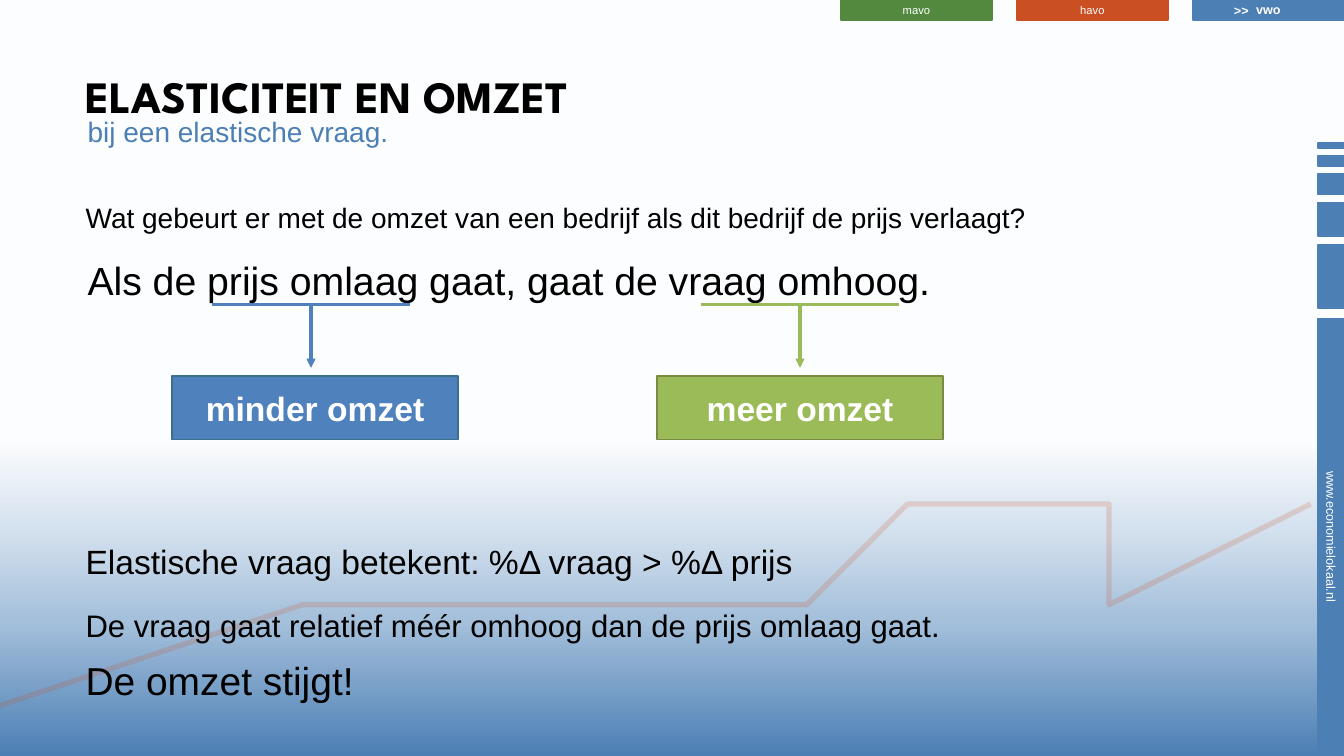
from lxml.etree import SubElement
from pptx import Presentation
from pptx.dml.color import RGBColor
from pptx.enum.shapes import MSO_CONNECTOR, MSO_SHAPE
from pptx.enum.text import MSO_ANCHOR, PP_ALIGN
from pptx.oxml import parse_xml
from pptx.oxml.ns import nsdecls, qn
from pptx.util import Inches, Pt

W, H = 13.33, 7.5
BLUE, RED, GREEN = "4C7FB4", "CA4F22", "52893F"
WHITE, BLACK = "FFFFFF", "000000"
BACKGROUND = [(0, BLUE), (18, "A5C0DB"), (30, "D4E1EE"), (42, "FCFDFE"), (50, WHITE)]
TREND = [(12.97, 4.62), (11.12, 5.51), (10.71, 5.37), (9.28, 5.49), (8.49, 5.66),
         (7.85, 5.57), (5.97, 5.68), (5.01, 6.03), (3.57, 6.15), (2.7, 6.38), (0.03, 7.13)]


def rgb(hex_color):
    return RGBColor.from_string(hex_color)


def write(tf, text, size=20, color=BLACK, bold=False, font="Arial",
          align=PP_ALIGN.LEFT, before=0, after=0, new=False):
    """Write one paragraph, in the first one of the frame unless new is set."""
    p = tf.add_paragraph() if new else tf.paragraphs[0]
    p.alignment, p.space_before, p.space_after = align, Pt(before), Pt(after)
    r = p.add_run()
    r.text = text
    r.font.name, r.font.size, r.font.bold = font, Pt(size), bold
    r.font.color.rgb = rgb(color)


def add_text(s, box, text, wrap=True, **style):
    tf = s.shapes.add_textbox(*map(Inches, box)).text_frame
    tf.word_wrap = wrap
    write(tf, text, **style)
    return tf


def add_box(s, box, fill, line, text="", slim=False, **style):
    """Add a rectangle; slim takes away the vertical margins."""
    sp = s.shapes.add_shape(MSO_SHAPE.RECTANGLE, *map(Inches, box))
    sp.shadow.inherit = False
    sp.fill.solid()
    sp.fill.fore_color.rgb = rgb(fill)
    sp.line.color.rgb = rgb(line)
    sp.line.width = Pt(1.25)
    if text:
        tf = sp.text_frame
        tf.vertical_anchor = MSO_ANCHOR.MIDDLE
        if slim:
            tf.margin_top, tf.margin_bottom = 0, Inches(0.01)
        write(tf, text, color=WHITE, align=PP_ALIGN.CENTER, **style)
    return sp


def add_line(s, start, end, color, arrow=False):
    c = s.shapes.add_connector(MSO_CONNECTOR.STRAIGHT, *map(Inches, start + end))
    c.line.color.rgb = rgb(color)
    c.line.width = Pt(2.25)
    if arrow:
        SubElement(c.line._get_or_add_ln(), qn("a:tailEnd"), type="triangle")
    SubElement(c._element.spPr, qn("a:effectLst"))


def add_background(s):
    fill = s.background.fill
    fill.gradient()
    fill.gradient_angle = 90
    stops = "".join(f'<a:gs pos="{pos * 1000}"><a:srgbClr val="{color}"/></a:gs>'
                    for pos, color in BACKGROUND)
    old = fill.gradient_stops[0]._gs.getparent()
    old.getparent().replace(old, parse_xml(f'<a:gsLst {nsdecls("a")}>{stops}</a:gsLst>'))


def add_trend(s):
    builder = s.shapes.build_freeform(*TREND[0], scale=Inches(1))
    builder.add_line_segments(TREND[1:], close=False)
    sp = builder.convert_to_shape()
    sp.shadow.inherit = False
    sp.fill.background()
    sp.line.color.rgb = rgb(RED)
    sp.line.width = Pt(3.75)
    color = sp.line._get_or_add_ln().find(".//" + qn("a:srgbClr"))
    SubElement(color, qn("a:alpha"), val="19000")


def add_level_tabs(s, left, width, pitch, height):
    levels = [("mavo", GREEN, 8), ("havo", RED, 8), ("vwo", BLUE, 9)]
    for i, (level, color, size) in enumerate(levels):
        add_box(s, (left + i * pitch, 0, width, height), color, color, level,
                slim=True, size=size, bold=level == "vwo")
    add_text(s, (left + 2 * pitch + 0.31, -0.02, 0.35, 0.25), ">>", wrap=False,
             size=9, color=WHITE, bold=True)


def add_side_bars(s, center, thickness):
    """Stack bars of growing length, turned so that their text runs down."""
    bars = [(1.42, 0.05), (1.55, 0.1), (1.73, 0.2), (2.01, 0.33), (2.43, 0.63), (3.16, 4.33)]
    for top, length in bars:
        text = "www.economielokaal.nl" if length == 4.33 else ""
        box = (center - length / 2, top + (length - thickness) / 2, length, thickness)
        add_box(s, box, BLUE, BLUE, text, slim=True, size=9).rotation = 90


def add_effect(s, box, text, fill, edge, underline):
    """Underline a phrase and point from its middle to the box with its effect."""
    left, right, y = underline
    middle = (left + right) / 2
    add_line(s, (left, y), (right, y), fill)
    add_line(s, (middle, y), (middle, box[1] - 0.08), fill, arrow=True)
    add_box(s, box, fill, edge, text, size=24, bold=True)


def add_heading(s, left, top, width):
    title = s.shapes.title
    title.left, title.top, title.width, title.height = map(Inches, (left, top, width, 0.89))
    title.text_frame.vertical_anchor = MSO_ANCHOR.MIDDLE
    write(title.text_frame, "ELASTICITEIT EN OMZET", size=32, bold=True, font="League Spartan")
    add_text(s, (left + 0.02, top + 0.59, 4.46, 0.74), "bij een elastische vraag.", color=BLUE)


def add_reasoning(s, left):
    add_text(s, (left, 1.94, 10.88, 0.53),
             "Wat gebeurt er met de omzet van een bedrijf als dit bedrijf de prijs verlaagt?")
    add_text(s, (left, 2.49, 8.59, 0.71), "Als de prijs omlaag gaat, gaat de vraag omhoog.",
             size=28, align=PP_ALIGN.CENTER)
    add_effect(s, (1.71, 3.73, 2.83, 0.63), "minder omzet", "4F81BD", "3A708C", (2.1, 4.07, 3.02))
    add_effect(s, (6.52, 3.73, 2.83, 0.63), "meer omzet", "9BBB59", "798A42", (6.95, 8.92, 3.02))


def add_conclusion(s, left):
    add_text(s, (left, 5.32, 10.95, 0.5), "Elastische vraag betekent: %Δ vraag > %Δ prijs", size=24)
    tf = add_text(s, (left, 5.97, 11.2, 1.04),
                  "De vraag gaat relatief méér omhoog dan de prijs omlaag gaat.",
                  size=22.2, after=3.4)
    write(tf, "De omzet stijgt!", size=27.8, before=5.6, new=True)


def main():
    prs = Presentation()
    prs.slide_width, prs.slide_height = Inches(W), Inches(H)
    s = prs.slides.add_slide(prs.slide_layouts[5])
    add_background(s)
    add_side_bars(s, center=W - 0.13, thickness=0.26)
    add_level_tabs(s, left=8.34, width=1.5, pitch=1.745, height=0.2)
    add_trend(s)
    add_heading(s, 0.75, 0.5, 10.02)
    add_reasoning(s, 0.75)
    add_conclusion(s, 0.75)
    prs.save("out.pptx")


if __name__ == "__main__":
    main()
